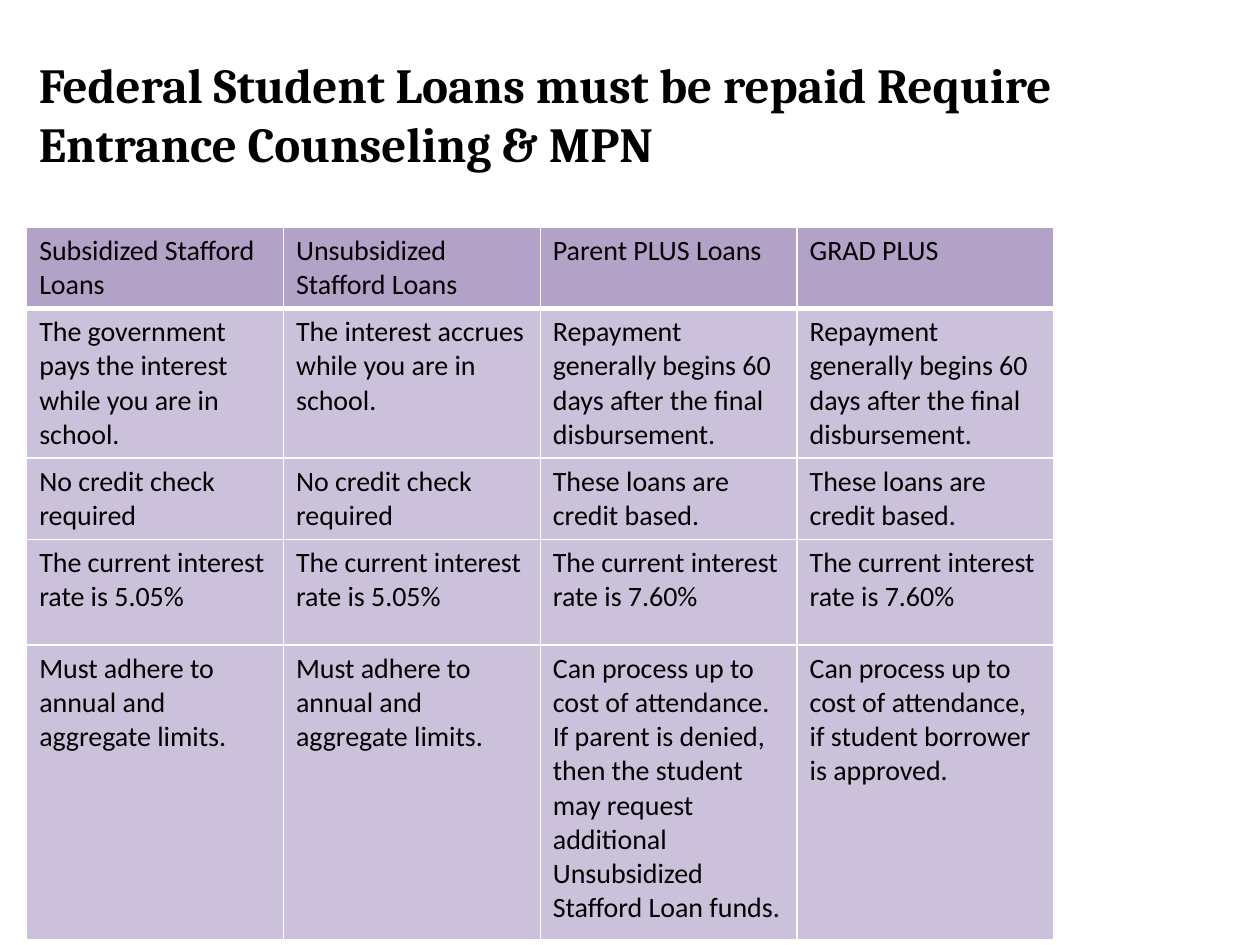
"""Build a slide that compares the four kinds of federal student loan."""

from dataclasses import astuple, dataclass
from typing import Any

from pptx import Presentation
from pptx.dml.color import RGBColor
from pptx.enum.text import MSO_ANCHOR, MSO_AUTO_SIZE, PP_ALIGN
from pptx.oxml.ns import qn
from pptx.slide import Slide
from pptx.table import _Cell
from pptx.util import Pt
from lxml import etree

LEFT = PP_ALIGN.LEFT
MIDDLE = MSO_ANCHOR.MIDDLE
NO_FIT = MSO_AUTO_SIZE.NONE
TITLE_ONLY = 5


@dataclass(frozen=True)
class Theme:
    """Colours, fonts and type sizes of the slide."""

    ink: RGBColor = RGBColor.from_string("000000")
    header_fill: RGBColor = RGBColor.from_string("B3A2C7")
    body_fill: RGBColor = RGBColor.from_string("CCC1DA")
    rule: str = "FFFFFF"
    rule_width: float = 1
    header_rule_width: float = 3
    title_font: str = "Cambria"
    title_size: float = 28
    table_font: str = "Calibri"
    table_size: float = 16


@dataclass(frozen=True)
class Loan:
    """One column of the table, from its heading down."""

    name: str
    repayment: str
    credit: str
    rate: str
    limit: str


THEME = Theme()
TITLE = "Federal Student Loans must be repaid Require Entrance Counseling & MPN"
TITLE_BOX = {"left": Pt(15), "top": Pt(0), "width": Pt(598), "height": Pt(130)}
TITLE_FRAME = {"vertical_anchor": MIDDLE, "auto_size": NO_FIT, "word_wrap": True}
TITLE_TYPE = {"name": THEME.title_font, "size": Pt(THEME.title_size), "bold": True}
TABLE_TYPE = {"name": THEME.table_font, "size": Pt(THEME.table_size), "bold": False}
TABLE_LEFT, TABLE_TOP = 15.25, 130
COLUMN_WIDTH = 146.75
ROW_HEIGHTS = (44, 80, 44, 60.5, 168.5)

NO_CHECK = "No credit check required"
CREDIT_BASED = "These loans are credit based."
AFTER_DISBURSEMENT = "Repayment generally begins 60 days after the final disbursement."
STAFFORD_RATE = "The current interest rate is 5.05%"
PLUS_RATE = "The current interest rate is 7.60%"
STAFFORD_LIMIT = "Must adhere to annual and aggregate limits."

LOANS = (
    Loan(
        "Subsidized Stafford Loans",
        "The government pays the interest while you are in school.",
        NO_CHECK,
        STAFFORD_RATE,
        STAFFORD_LIMIT,
    ),
    Loan(
        "Unsubsidized Stafford Loans",
        "The interest accrues while you are in school.",
        NO_CHECK,
        STAFFORD_RATE,
        STAFFORD_LIMIT,
    ),
    Loan(
        "Parent PLUS Loans",
        AFTER_DISBURSEMENT,
        CREDIT_BASED,
        PLUS_RATE,
        "Can process up to cost of attendance. If parent is denied, then the student "
        "may request additional Unsubsidized Stafford Loan funds.",
    ),
    Loan(
        "GRAD PLUS",
        AFTER_DISBURSEMENT,
        CREDIT_BASED,
        PLUS_RATE,
        "Can process up to cost of attendance, if student borrower is approved.",
    ),
)


def apply_format(target: Any, values: dict[str, Any]) -> None:
    """Set each named attribute of the target."""
    for name, value in values.items():
        setattr(target, name, value)


def draw_title(slide: Slide) -> None:
    """Place and format the slide title."""
    title = slide.shapes.title
    apply_format(title, TITLE_BOX)
    title.text_frame.text = TITLE
    apply_format(title.text_frame, TITLE_FRAME)
    heading = title.text_frame.paragraphs[0]
    heading.alignment = LEFT
    apply_format(heading.runs[0].font, TITLE_TYPE)
    heading.runs[0].font.color.rgb = THEME.ink


def draw_borders(cell: _Cell, bottom_width: float) -> None:
    """Rule the four sides of a cell."""
    properties = cell._tc.get_or_add_tcPr()
    for side in "LRTB":
        width = bottom_width if side == "B" else THEME.rule_width
        line = etree.SubElement(properties, qn(f"a:ln{side}"), w=str(Pt(width)))
        fill = etree.SubElement(line, qn("a:solidFill"))
        etree.SubElement(fill, qn("a:srgbClr"), val=THEME.rule)


def draw_cell(cell: _Cell, wording: str, is_header: bool) -> None:
    """Write, rule and fill one table cell."""
    cell.text = wording
    entry = cell.text_frame.paragraphs[0].runs[0]
    apply_format(entry.font, TABLE_TYPE)
    entry.font.color.rgb = THEME.ink
    draw_borders(cell, THEME.header_rule_width if is_header else THEME.rule_width)
    cell.fill.solid()
    cell.fill.fore_color.rgb = THEME.header_fill if is_header else THEME.body_fill


def draw_loans(slide: Slide, loans: tuple[Loan, ...]) -> None:
    """Draw the table with one column for each loan."""
    table = slide.shapes.add_table(
        len(ROW_HEIGHTS),
        len(loans),
        Pt(TABLE_LEFT),
        Pt(TABLE_TOP),
        Pt(COLUMN_WIDTH * len(loans)),
        Pt(sum(ROW_HEIGHTS)),
    ).table
    for row, height in zip(table.rows, ROW_HEIGHTS):
        row.height = Pt(height)
    for column_index, loan in enumerate(loans):
        table.columns[column_index].width = Pt(COLUMN_WIDTH)
        for row_index, wording in enumerate(astuple(loan)):
            draw_cell(table.cell(row_index, column_index), wording, row_index == 0)


def main() -> None:
    """Build and save the presentation."""
    presentation = Presentation()
    apply_format(presentation, {"slide_width": Pt(720), "slide_height": Pt(540)})
    slide = presentation.slides.add_slide(presentation.slide_layouts[TITLE_ONLY])
    draw_title(slide)
    draw_loans(slide, LOANS)
    presentation.save("out.pptx")


if __name__ == "__main__":
    main()
